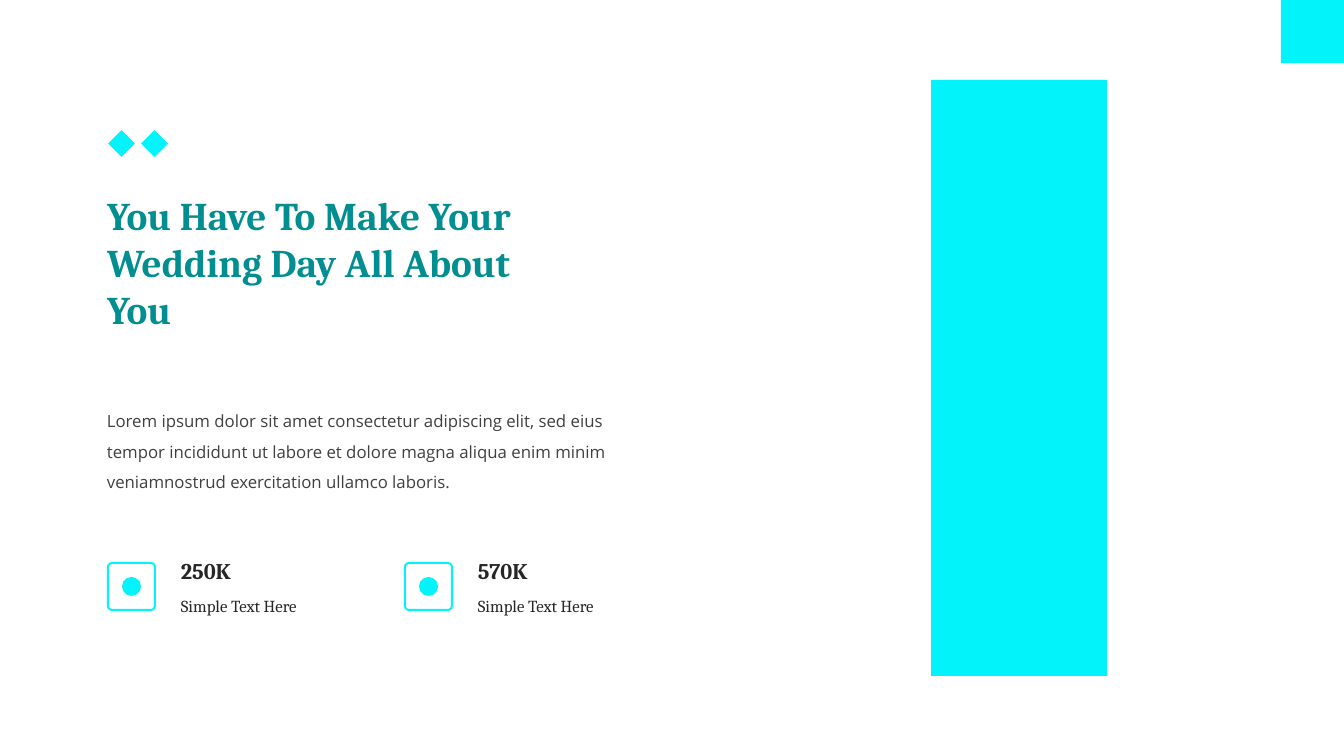
"""Build the wedding slide with a title, a paragraph and two follower counts."""
from dataclasses import dataclass

from pptx import Presentation
from pptx.dml.color import RGBColor
from pptx.enum.shapes import MSO_SHAPE
from pptx.enum.text import MSO_ANCHOR, MSO_AUTO_SIZE, PP_ALIGN
from pptx.util import Emu, Pt

HEADLINE = "You Have To Make Your Wedding Day All About You"
INTRO = (
    "Lorem ipsum dolor sit amet consectetur adipiscing elit, sed eius "
    "tempor incididunt ut labore et dolore magna aliqua enim minim "
    "veniamnostrud exercitation ullamco laboris."
)
FOLLOWERS = [("250K", "Simple Text Here"), ("570K", "Simple Text Here")]

SLIDE_WIDTH, SLIDE_HEIGHT = 1344, 756
TEXT_LEFT = 97
CORNER_SIDE = 63
DIAMOND_LEFT, DIAMOND_TOP, DIAMOND_SIDE, DIAMOND_STEP = 112, 134, 19, 33
FRAME_LEFT, FRAME_TOP, FRAME_SIDE, FRAME_STEP = 108, 563, 47, 297
FRAME_RADIUS, FRAME_LINE = 4, 2
DOT_SIDE = 19
LABEL_OFFSET = 63


@dataclass(frozen=True)
class Theme:
    accent: RGBColor = RGBColor.from_string("02F3F9")
    headline: RGBColor = RGBColor.from_string("018E91")
    dark: RGBColor = RGBColor.from_string("262626")
    grey: RGBColor = RGBColor.from_string("404040")
    serif: str = "Cambria"
    sans: str = "Open Sans"
    headline_size: int = 28
    count_size: int = 16
    text_size: int = 12


THEME = Theme()


def px(length):
    return Emu(round(length * 914400 / 100.8))


def add_solid(slide, preset, left, top, width, height):
    solid = slide.shapes.add_shape(preset, px(left), px(top), px(width), px(height))
    solid.shadow.inherit = False
    solid.fill.solid()
    solid.fill.fore_color.rgb = THEME.accent
    solid.line.fill.background()
    return solid


def write(holder, text, face, size, color, bold=False, spacing=None):
    frame = holder.text_frame
    frame.word_wrap = True
    frame.auto_size = MSO_AUTO_SIZE.SHAPE_TO_FIT_TEXT
    frame.vertical_anchor = MSO_ANCHOR.TOP
    frame.text = text
    paragraph = frame.paragraphs[0]
    paragraph.alignment = PP_ALIGN.LEFT
    if spacing:
        paragraph.line_spacing = spacing
    font = paragraph.font
    font.name, font.size, font.bold = face, Pt(size), bold
    font.color.rgb = color


def add_text(slide, left, top, width, height, *style, **options):
    box = slide.shapes.add_textbox(px(left), px(top), px(width), px(height))
    write(box, *style, **options)


def add_follower(slide, index, count, caption):
    left = FRAME_LEFT + index * FRAME_STEP
    frame = add_solid(slide, MSO_SHAPE.ROUNDED_RECTANGLE,
                      left, FRAME_TOP, FRAME_SIDE, FRAME_SIDE)
    frame.adjustments[0] = FRAME_RADIUS / FRAME_SIDE
    frame.fill.background()
    frame.line.color.rgb = THEME.accent
    frame.line.width = px(FRAME_LINE)

    inset = (FRAME_SIDE - DOT_SIDE) // 2
    add_solid(slide, MSO_SHAPE.OVAL, left + inset, FRAME_TOP + inset, DOT_SIDE, DOT_SIDE)

    label_left = left + LABEL_OFFSET
    add_text(slide, label_left, 591, 155, 30,
             caption, THEME.serif, THEME.text_size, THEME.dark)
    add_text(slide, label_left, 552, 87, 37,
             count, THEME.serif, THEME.count_size, THEME.dark, bold=True)


def main():
    deck = Presentation()
    deck.slide_width, deck.slide_height = px(SLIDE_WIDTH), px(SLIDE_HEIGHT)
    slide = deck.slides.add_slide(deck.slide_layouts[5])

    headline = slide.shapes.title
    headline.left, headline.top = px(TEXT_LEFT), px(186)
    headline.width, headline.height = px(429), px(152)
    write(headline, HEADLINE, THEME.serif, THEME.headline_size, THEME.headline, bold=True)

    add_solid(slide, MSO_SHAPE.RECTANGLE, 931, 80, 176, 596)
    add_solid(slide, MSO_SHAPE.RECTANGLE,
              SLIDE_WIDTH - CORNER_SIDE, 0, CORNER_SIDE, CORNER_SIDE)
    for index in range(2):
        diamond = add_solid(slide, MSO_SHAPE.RECTANGLE,
                            DIAMOND_LEFT + index * DIAMOND_STEP, DIAMOND_TOP,
                            DIAMOND_SIDE, DIAMOND_SIDE)
        diamond.rotation = 45

    for index, (count, caption) in enumerate(FOLLOWERS):
        add_follower(slide, index, count, caption)
    add_text(slide, TEXT_LEFT, 396, 528, 99,
             INTRO, THEME.sans, THEME.text_size, THEME.grey, spacing=1.5)

    deck.save("out.pptx")


if __name__ == "__main__":
    main()
